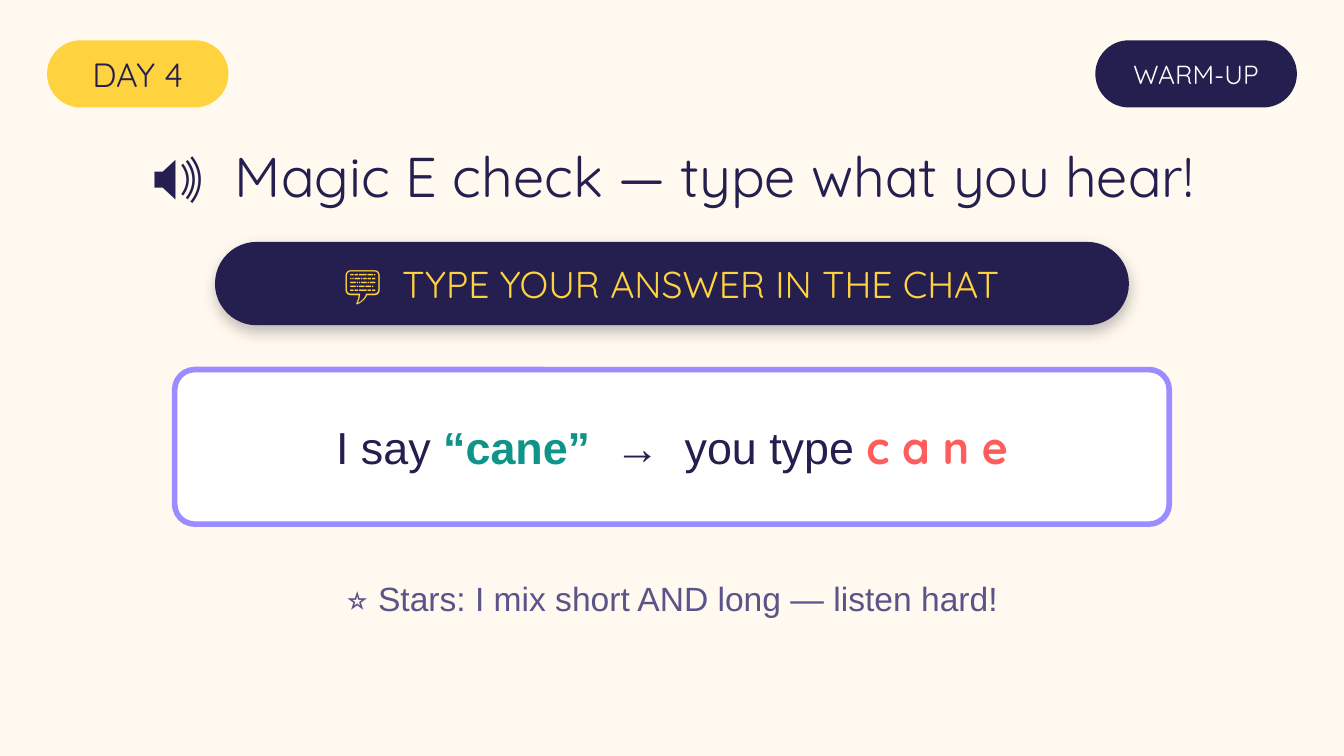
from lxml.etree import SubElement as Sub
from pptx import Presentation
from pptx.dml.color import RGBColor as RGB
from pptx.enum.shapes import MSO_SHAPE as Shape
from pptx.enum.text import MSO_ANCHOR as Anchor, MSO_AUTO_SIZE as Auto, PP_ALIGN as Align
from pptx.oxml.ns import qn
from pptx.util import Inches, Pt

HUES = {
    "cream": "FFF9EF", "gold": "FFD23F", "navy": "241F4E", "white": "FFFFFF",
    "lilac": "9B8CFF", "teal": "0E9488", "coral": "FF5D5D", "plum": "5A548A",
}
HEAD, BODY = "Quicksand", "Arial"


def hue(name):
    """Return the named colour."""
    return RGB.from_string(HUES[name])


def write(para, text, font=HEAD, size=18, color="navy", bold=False, track=0):
    """Add one formatted run, with optional tracking in points."""
    run = para.add_run()
    run.text = text
    face = run.font
    face.name, face.size, face.bold = font, Pt(size), bold
    face.color.rgb = hue(color)
    if track:
        run._r.get_or_add_rPr().set("spc", str(int(track * 100)))


def setup(shape, inset=None):
    """Centre the text of a shape and return its first paragraph."""
    frame = shape.text_frame
    frame.word_wrap, frame.auto_size = True, Auto.NONE
    frame.vertical_anchor = Anchor.MIDDLE
    if inset is not None:
        frame.margin_left = frame.margin_right = Inches(inset)
        frame.margin_top = frame.margin_bottom = Inches(inset)
    para = frame.paragraphs[0]
    para.alignment = Align.CENTER
    return para


def panel(slide, box, fill, curve=0.5, line=None):
    """Draw a rounded panel with a plain fill."""
    shape = slide.shapes.add_shape(Shape.ROUNDED_RECTANGLE, *map(Inches, box))
    shape.adjustments[0] = curve
    shape.shadow.inherit = False
    shape.fill.solid()
    shape.fill.fore_color.rgb = hue(fill)
    if line:
        shape.line.color.rgb = hue(line)
        shape.line.width = Pt(3)
    else:
        shape.line.fill.background()
    return shape


def shade(shape):
    """Give a shape a soft shadow below it."""
    glow = shape._element.spPr.find(qn("a:effectLst"))
    drop = Sub(glow, qn("a:outerShdw"), blurRad=str(Pt(8)), dist=str(Pt(3)),
               dir="5400000", algn="ctr", rotWithShape="0")
    tint = Sub(drop, qn("a:srgbClr"), val="000000")
    Sub(tint, qn("a:alpha"), val="25000")


def badge(slide, box, text, fill, **form):
    """Draw a pill with a short label."""
    write(setup(panel(slide, box, fill), 0), text, **form)


def lead(para, icon, text, gap, **form):
    """Write an icon and a text with a wide space between them."""
    write(para, icon, **form)
    write(para, " ", track=gap, **form)
    write(para, text, **form)


def title(slide):
    """Fill the title placeholder."""
    head = slide.shapes.title
    head.left, head.top, head.width, head.height = map(Inches, (0, 0.95, 10, 0.7))
    lead(setup(head), "🔊", "Magic E check — type what you hear!", 8.5, size=30)


def prompt(slide):
    """Draw the chat prompt."""
    pill = panel(slide, (1.6, 1.8, 6.8, 0.62), "navy")
    shade(pill)
    lead(setup(pill, 0), "💬", "TYPE YOUR ANSWER IN THE CHAT", 5.7,
         size=20, color="gold")


def sample(slide):
    """Draw the card with the worked example."""
    card = panel(slide, (1.3, 2.75, 7.4, 1.15), "white", 0.13, "lilac")
    para = setup(card)
    form = {"font": BODY, "size": 24}
    write(para, "I say ", **form)
    write(para, "“cane”", color="teal", bold=True, **form)
    for part, gap in ((" ", 6.67), ("→", 0), (" ", 6.67), ("you type ", 0)):
        write(para, part, track=gap, **form)
    write(para, "c a n e", size=24, color="coral", bold=True)


def main():
    """Build the slide and save it."""
    deck = Presentation()
    deck.slide_width = Inches(10)
    deck.slide_height = deck.slide_width * 9 // 16
    slide = deck.slides.add_slide(deck.slide_layouts[5])
    back = slide.background.fill
    back.solid()
    back.fore_color.rgb = hue("cream")
    badge(slide, (0.35, 0.3, 1.35, 0.5), "DAY 4", "gold")
    badge(slide, (8.15, 0.3, 1.5, 0.5), "WARM-UP", "navy", size=14, color="white")
    title(slide)
    prompt(slide)
    sample(slide)
    note = slide.shapes.add_textbox(*map(Inches, (0, 4.2, 10, 0.5)))
    write(setup(note), "⭐ Stars: I mix short AND long — listen hard!",
          font=BODY, color="plum")
    deck.save("out.pptx")


if __name__ == "__main__":
    main()
